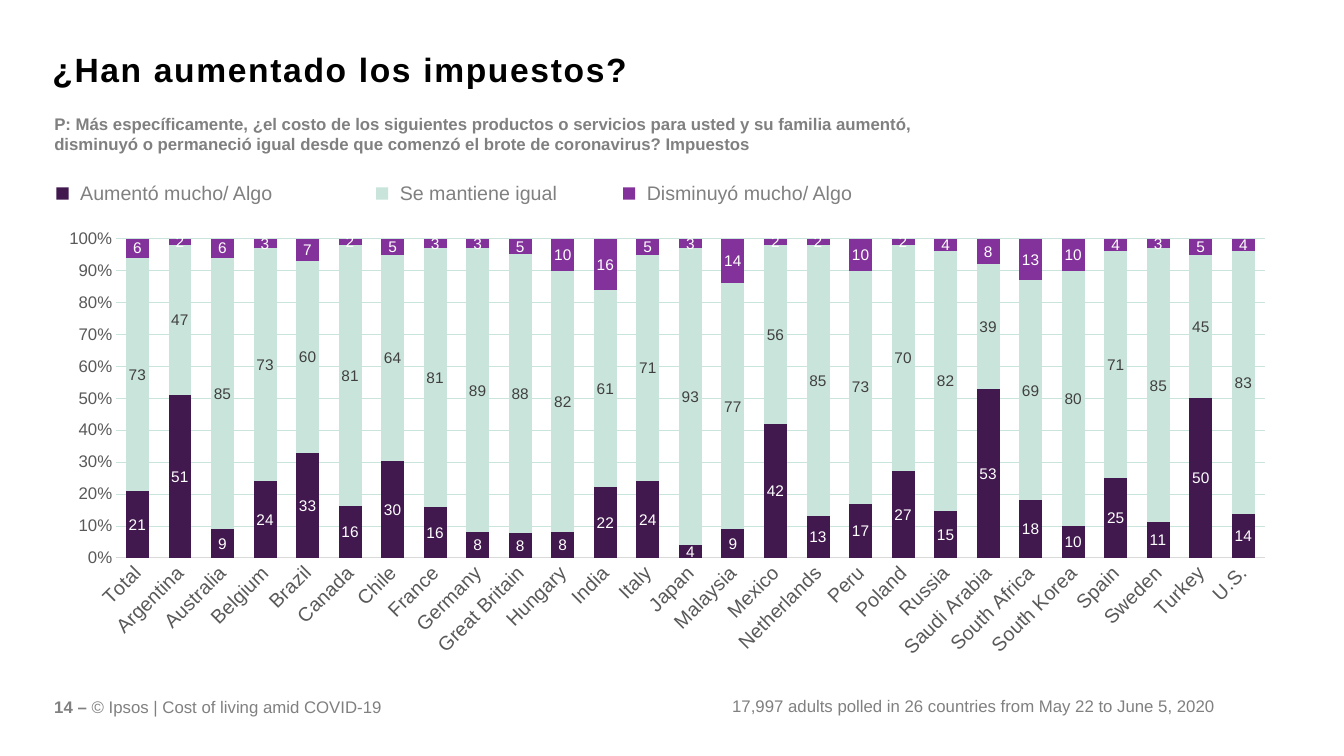
import pptx
import pptx.chart.data
import pptx.dml.color
import pptx.enum.chart
import pptx.enum.shapes
import pptx.enum.text
import pptx.util

RGB = pptx.dml.color.RGBColor
PLUM = RGB(0x42, 0x19, 0x4E)
MINT = RGB(0xC9, 0xE4, 0xDB)
PURPLE = RGB(0x84, 0x32, 0x9B)
BLACK = RGB(0, 0, 0)
WHITE = RGB(0xFF, 0xFF, 0xFF)
GRAY = RGB(0x80, 0x80, 0x80)
AXIS_TEXT = RGB(0x59, 0x59, 0x59)
AXIS_LINE = RGB(0xD9, 0xD9, 0xD9)
DARK_LABEL = RGB(0x40, 0x40, 0x40)

FONT = "Arial"
WIDTH = pptx.util.Inches(13.33)
HEIGHT = pptx.util.Inches(7.5)
MARGIN = 3.3  # left edge, percent of the slide width
CONTENT = 92.65  # content width, percent of the slide width

COUNTRIES = [
    "Total", "Argentina", "Australia", "Belgium", "Brazil", "Canada", "Chile",
    "France", "Germany", "Great Britain", "Hungary", "India", "Italy", "Japan",
    "Malaysia", "Mexico", "Netherlands", "Peru", "Poland", "Russia",
    "Saudi Arabia", "South Africa", "South Korea", "Spain", "Sweden", "Turkey",
    "U.S.",
]
# legend text, marker left, text width, fill, data label colour, values
ANSWERS = [
    ("Aumentó mucho/ Algo", 4.2, 18.9, PLUM, WHITE,
     [21, 51, 9, 24, 33, 16, 30, 16, 8, 8, 8, 22, 24, 4, 9, 42, 13, 17, 27, 15,
      53, 18, 10, 25, 11, 50, 14]),
    ("Se mantiene igual", 27.98, 14.7, MINT, DARK_LABEL,
     [73, 47, 85, 73, 60, 81, 64, 81, 89, 88, 82, 61, 71, 93, 77, 56, 85, 73, 70,
      82, 39, 69, 80, 71, 85, 45, 83]),
    ("Disminuyó mucho/ Algo", 46.36, 19.73, PURPLE, WHITE,
     [6, 2, 6, 3, 7, 2, 5, 3, 3, 5, 10, 16, 5, 3, 14, 2, 2, 10, 2, 4, 8, 13, 10,
      4, 3, 5, 4]),
]


def place(left, top, width, height):
    """Turn percentages of the slide's size into lengths."""
    return (int(WIDTH * left / 100), int(HEIGHT * top / 100),
            int(WIDTH * width / 100), int(HEIGHT * height / 100))


def set_font(font, size, color, bold=False):
    font.name = FONT
    font.size = pptx.util.Pt(size)
    font.bold = bold
    font.color.rgb = color


def add_text(slide, box, *texts, size=12, color=GRAY, bold=(False,),
             align=pptx.enum.text.PP_ALIGN.LEFT, inset=0.1, tracking=None,
             line_spacing=None):
    """Add one paragraph with a run for each text; bold has a flag for each."""
    tf = slide.shapes.add_textbox(*place(*box)).text_frame
    tf.word_wrap = True
    tf.margin_left = tf.margin_right = pptx.util.Inches(inset)
    p = tf.paragraphs[0]
    p.alignment = align
    p.line_spacing = line_spacing
    for text, is_bold in zip(texts, bold):
        r = p.add_run()
        r.text = text
        set_font(r.font, size, color, is_bold)
        if tracking:
            r.font._element.set("spc", str(tracking))


def add_legend_entry(slide, text, left, width, color):
    sp = slide.shapes.add_shape(pptx.enum.shapes.MSO_SHAPE.RECTANGLE,
                                *place(left, 24.8, 0.9, 1.6))
    sp.shadow.inherit = False
    sp.fill.solid()
    sp.fill.fore_color.rgb = color
    sp.line.fill.background()
    add_text(slide, (left + 1.03, 23.33, width, 4.53), text, size=14)


def style_axes(chart):
    none = pptx.enum.chart.XL_TICK_MARK.NONE
    for axis, size in ((chart.category_axis, 14), (chart.value_axis, 12)):
        axis.major_tick_mark = axis.minor_tick_mark = none
        set_font(axis.tick_labels.font, size, AXIS_TEXT)
    line = chart.category_axis.format.line
    line.color.rgb = AXIS_LINE
    line.width = pptx.util.Pt(0.75)

    values = chart.value_axis
    values.minimum_scale, values.maximum_scale, values.major_unit = 0, 1, 0.1
    values.tick_labels.number_format = "0%"
    values.tick_labels.number_format_is_linked = False
    values.format.line.fill.background()
    grid = values.major_gridlines.format.line
    grid.color.rgb = MINT
    grid.width = pptx.util.Pt(0.75)


def add_answer_chart(slide, box):
    data = pptx.chart.data.CategoryChartData(number_format="0")
    data.categories = COUNTRIES
    for number, answer in enumerate(ANSWERS, 1):
        data.add_series(f"Series {number}", answer[-1])
    chart = slide.shapes.add_chart(
        pptx.enum.chart.XL_CHART_TYPE.COLUMN_STACKED_100, *place(*box), data).chart
    chart.has_legend = False
    chart.has_title = False
    set_font(chart.font, 10, BLACK)
    style_axes(chart)

    plot = chart.plots[0]
    plot.gap_width = 85
    plot.overlap = 100
    plot.vary_by_categories = False
    for series, (_, _, _, color, label_color, _) in zip(plot.series, ANSWERS):
        series.format.fill.solid()
        series.format.fill.fore_color.rgb = color
        labels = series.data_labels
        labels.show_value = True
        labels.number_format = "0"
        labels.number_format_is_linked = False
        set_font(labels.font, 11, label_color)


def main():
    prs = pptx.Presentation()
    prs.slide_width, prs.slide_height = WIDTH, HEIGHT
    slide = prs.slides.add_slide(prs.slide_layouts[6])

    add_text(slide, (MARGIN, 5.33, CONTENT, 6.8), "¿Han aumentado los impuestos?",
             size=24, color=BLACK, bold=(True,), inset=0.08, tracking=120,
             line_spacing=1.1)
    add_text(slide, (MARGIN, 14.4, 66.32, 6.67),
             "P: Más específicamente, ¿el costo de los siguientes productos o "
             "servicios para usted y su familia aumentó, disminuyó o permaneció "
             "igual desde que comenzó el brote de coronavirus? Impuestos",
             bold=(True,))
    for text, left, width, color, _, _ in ANSWERS:
        add_legend_entry(slide, text, left, width, color)
    add_answer_chart(slide, (MARGIN, 29.2, CONTENT, 59.07))
    add_text(slide, (MARGIN, 91.47, 28.36, 3.33), "14 – ",
             "© Ipsos | Cost of living amid COVID-19", bold=(True, False))
    add_text(slide, (51.39, 91.33, 39.76, 4),
             "17,997 adults polled in 26 countries from May 22 to June 5, 2020",
             align=pptx.enum.text.PP_ALIGN.RIGHT)
    prs.save("out.pptx")


if __name__ == "__main__":
    main()
